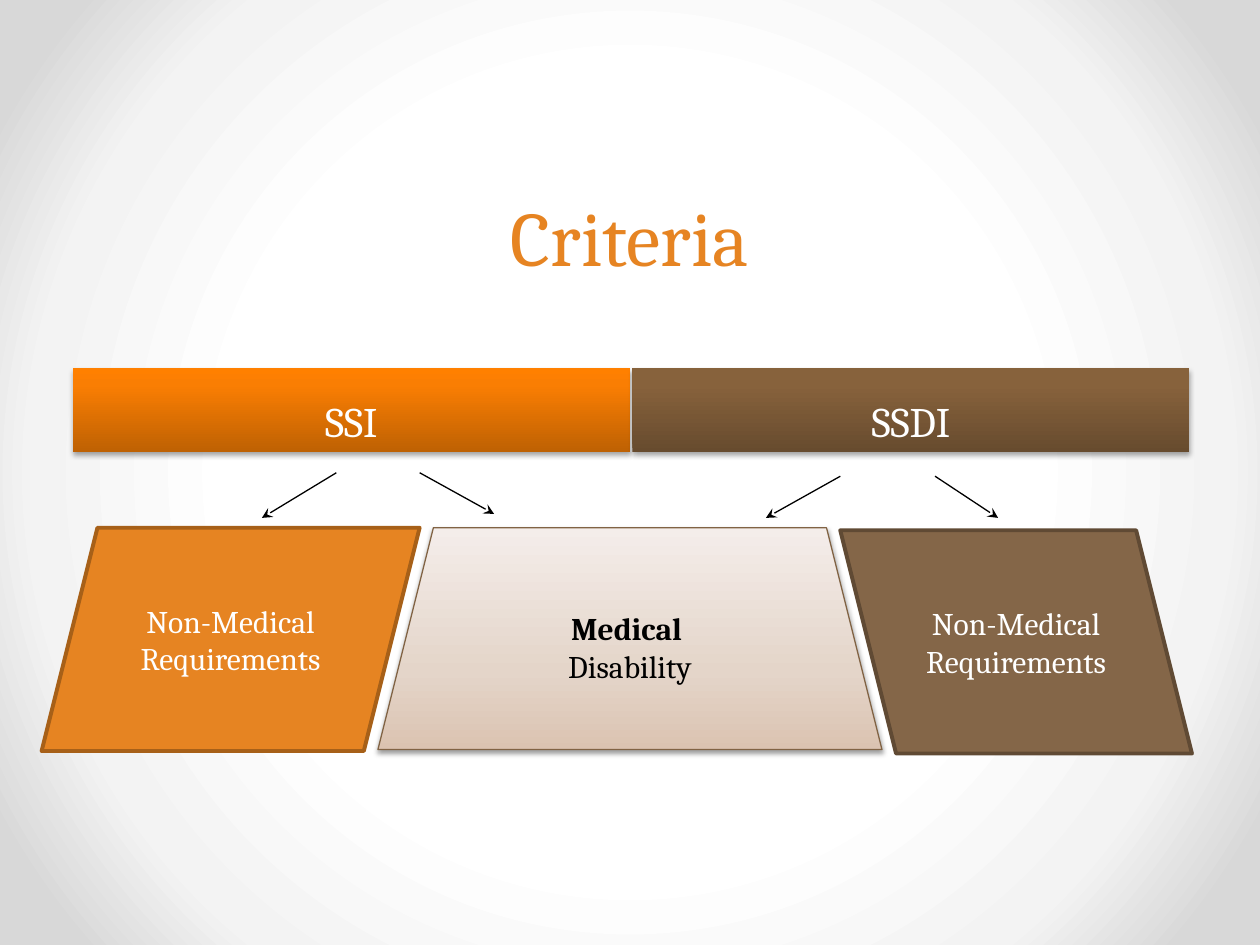
"""Build the slide comparing SSI and SSDI criteria."""
from lxml import etree
from pptx import Presentation
from pptx.dml.color import RGBColor
from pptx.enum.shapes import MSO_CONNECTOR, MSO_SHAPE
from pptx.enum.text import MSO_ANCHOR, PP_ALIGN
from pptx.oxml.ns import qn
from pptx.util import Cm, Pt

RECTANGLE = MSO_SHAPE.RECTANGLE
TRAPEZOID = MSO_SHAPE.TRAPEZOID
PARALLELOGRAM = MSO_SHAPE.PARALLELOGRAM
STRAIGHT = MSO_CONNECTOR.STRAIGHT
CENTER = PP_ALIGN.CENTER
MIDDLE, BOTTOM = MSO_ANCHOR.MIDDLE, MSO_ANCHOR.BOTTOM

FONT = "Cambria"
WHITE = RGBColor(0xFF, 0xFF, 0xFF)
BLACK = RGBColor(0, 0, 0)
ORANGE = RGBColor(0xE6, 0x84, 0x22)
DARK_ORANGE = RGBColor(0xA7, 0x60, 0x18)
BROWN = RGBColor(0x84, 0x66, 0x48)
DARK_BROWN = RGBColor(0x60, 0x4A, 0x34)
TAN = RGBColor(0x81, 0x63, 0x44)
LIGHT_GRAY = RGBColor(0xF3, 0xF3, 0xF3)
GRAY = RGBColor(0xD8, 0xD8, 0xD8)

BACKGROUND = [(0, WHITE), (50, WHITE), (76, LIGHT_GRAY), (92, GRAY), (100, GRAY)]
ORANGE_FADE = [(0, RGBColor(0xBE, 0x61, 0x03)), (80, RGBColor(0xFA, 0x7E, 0x03)),
               (100, RGBColor(0xFF, 0x80, 0x00))]
BROWN_FADE = [(0, RGBColor(0x67, 0x4B, 0x2E)), (80, RGBColor(0x87, 0x62, 0x3C)),
              (100, RGBColor(0x8A, 0x63, 0x3B))]
TAN_FADE = [(0, RGBColor(0xDB, 0xC3, 0xB1)), (35, RGBColor(0xE4, 0xD5, 0xC9)),
            (100, RGBColor(0xF4, 0xED, 0xEA))]

TITLE = "Criteria"
TITLE_PLACE = (1.27, 4.01, 22.86, 1.8)
PROGRAMS = [("SSI", ORANGE_FADE), ("SSDI", BROWN_FADE)]
BAR_LEFT, BAR_TOP, BAR_WIDTH, BAR_HEIGHT, BAR_GAP = 1.47, 7.42, 11.23, 1.7, 0.05
NON_MEDICAL = "Non-Medical\nRequirements"
MEDICAL = "Medical \nDisability"
MEDICAL_PLACE = (7.62, 10.64, 10.16, 4.47)
REQUIREMENTS = [
    ((0.84, 10.64, 7.62, 4.5), ORANGE, DARK_ORANGE, False),
    ((16.94, 10.69, 7.09, 4.5), BROWN, DARK_BROWN, True),
]
ARROWS = [
    (8.46, 9.53, 9.96, 10.36),
    (16.94, 9.6, 15.44, 10.44),
    (6.78, 9.53, 5.28, 10.44),
    (18.85, 9.6, 20.12, 10.44),
]


def add_gradient(fill, parent, stops, radial=False):
    fill.solid()
    gradient = etree.Element(qn("a:gradFill"), rotWithShape="1")
    stop_list = etree.SubElement(gradient, qn("a:gsLst"))
    for position, color in stops:
        stop = etree.SubElement(stop_list, qn("a:gs"), pos=str(position * 1000))
        etree.SubElement(stop, qn("a:srgbClr"), val=str(color))
    if radial:
        route = etree.SubElement(gradient, qn("a:path"), path="circle")
        etree.SubElement(route, qn("a:fillToRect"),
                         {side: "50000" for side in "ltrb"})
    else:
        etree.SubElement(gradient, qn("a:lin"), ang="16200000", scaled="0")
    parent.replace(parent.find(qn("a:solidFill")), gradient)


def add_shadow(shape, opacity, distance):
    effects = shape._element.spPr.find(qn("a:effectLst"))
    shadow = etree.SubElement(
        effects, qn("a:outerShdw"), blurRad=str(Pt(3.1)), dist=str(Pt(distance)),
        dir="5400000", rotWithShape="0")
    color = etree.SubElement(shadow, qn("a:srgbClr"), val=str(BLACK))
    etree.SubElement(color, qn("a:alpha"), val=str(opacity * 1000))


def write_text(shape, text, size, color, anchor):
    frame = shape.text_frame
    frame.word_wrap = True
    frame.vertical_anchor = anchor
    frame.text = text
    for paragraph in frame.paragraphs:
        paragraph.alignment = CENTER
        for span in paragraph.runs:
            span.font.name = FONT
            span.font.size = Pt(size)
            span.font.color.rgb = color


def add_panel(page, kind, place, fill, outline=None, weight=0):
    shape = page.shapes.add_shape(kind, *map(Cm, place))
    shape.shadow.inherit = False
    if isinstance(fill, list):
        add_gradient(shape.fill, shape._element.spPr, fill)
    else:
        shape.fill.solid()
        shape.fill.fore_color.rgb = fill
    if outline is None:
        shape.line.fill.background()
    else:
        shape.line.color.rgb = outline
        shape.line.width = Pt(weight)
    return shape


def add_arrow(page, ends):
    arrow = page.shapes.add_connector(STRAIGHT, *map(Cm, ends))
    arrow.line.color.rgb = BLACK
    arrow.line.width = Pt(0.75)
    etree.SubElement(arrow.line._get_or_add_ln(), qn("a:tailEnd"), type="stealth")
    etree.SubElement(arrow._element.spPr, qn("a:effectLst"))


def main():
    deck = Presentation()
    deck.slide_width, deck.slide_height = Cm(25.4), Cm(19.05)
    page = deck.slides.add_slide(deck.slide_layouts[6])
    fill = page.background.fill
    add_gradient(fill, page._element.cSld.find(qn("p:bg")).find(qn("p:bgPr")),
                 BACKGROUND, radial=True)

    title = page.shapes.add_textbox(*map(Cm, TITLE_PLACE))
    write_text(title, TITLE, 44, ORANGE, BOTTOM)
    title.text_frame.paragraphs[0].line_spacing = 1.32

    for index, (name, fade) in enumerate(PROGRAMS):
        left = BAR_LEFT + index * (BAR_WIDTH + BAR_GAP)
        bar = add_panel(page, RECTANGLE, (left, BAR_TOP, BAR_WIDTH, BAR_HEIGHT), fade)
        add_shadow(bar, 35, 1.8)
        write_text(bar, name, 24, WHITE, BOTTOM)

    medical = add_panel(page, TRAPEZOID, MEDICAL_PLACE, TAN_FADE, TAN, 0.75)
    add_shadow(medical, 38, 1.6)
    write_text(medical, MEDICAL, 18, BLACK, MIDDLE)
    medical.text_frame.paragraphs[0].runs[0].font.bold = True

    for place, color, outline, mirrored in REQUIREMENTS:
        panel = add_panel(page, PARALLELOGRAM, place, color, outline, 2.25)
        if mirrored:
            panel._element.spPr.xfrm.set("flipH", "1")
        write_text(panel, NON_MEDICAL, 18, WHITE, MIDDLE)

    for ends in ARROWS:
        add_arrow(page, ends)
    deck.save("out.pptx")


if __name__ == "__main__":
    main()
